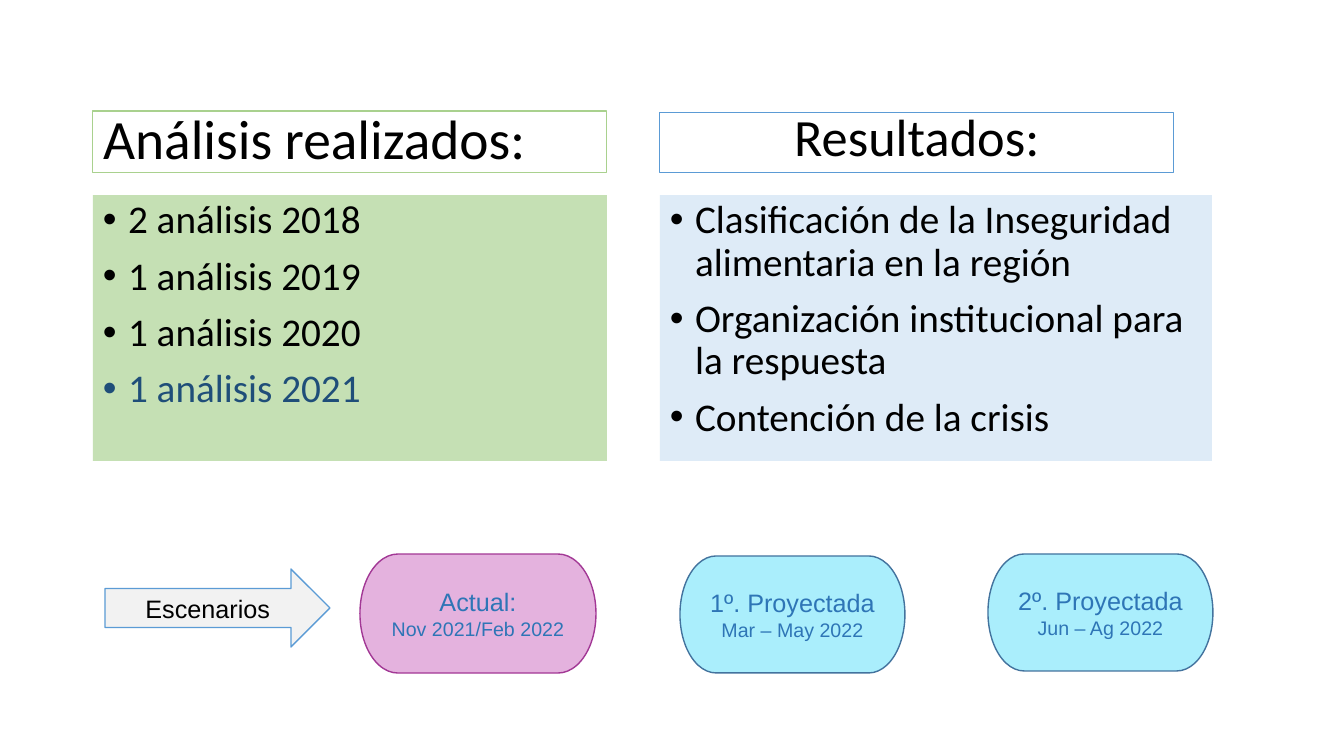
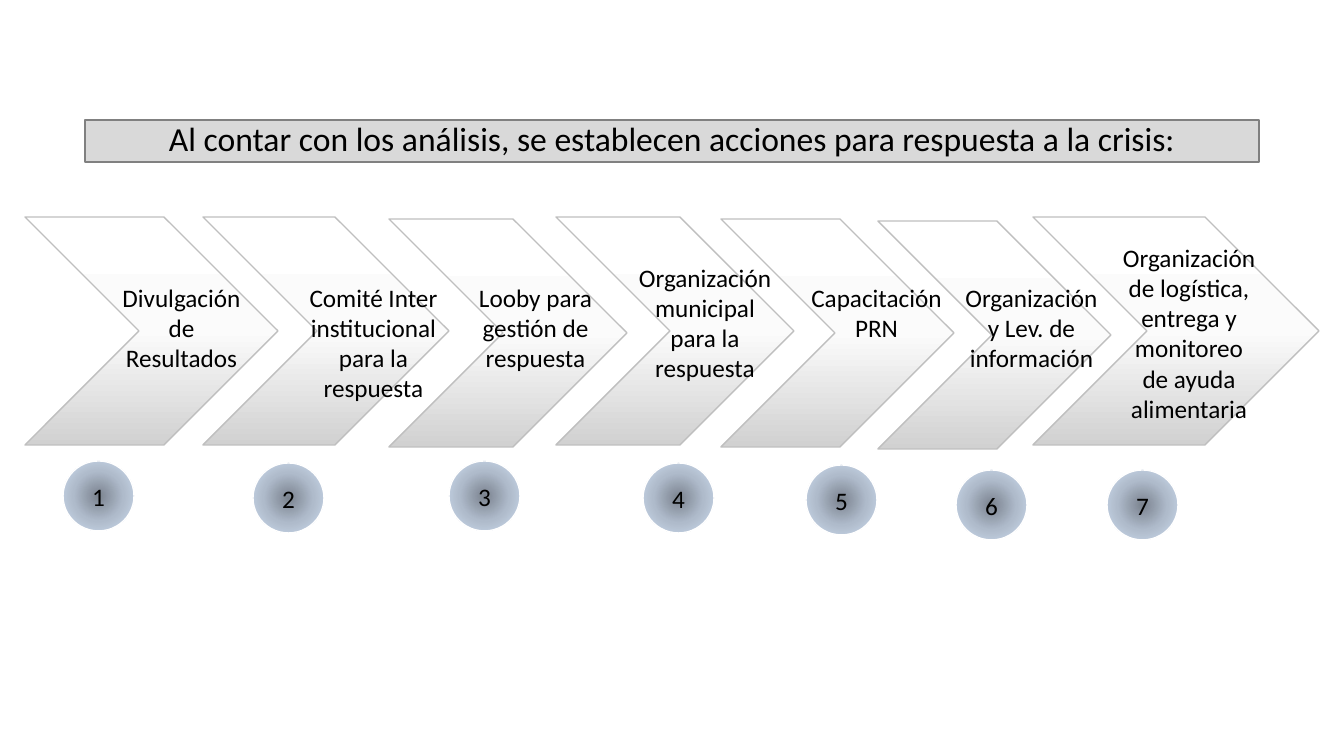
from pptx import Presentation
from pptx import util as u
from pptx.dml.color import RGBColor as Rgb
from pptx.enum import shapes, text
from pptx.oxml import parse_xml
from pptx.oxml.ns import nsdecls, qn

SCALE = 914400 / 100.8
BLACK = Rgb(0x00, 0x00, 0x00)
WHITE = Rgb(0xFF, 0xFF, 0xFF)
NAVY = Rgb(0x1F, 0x4E, 0x79)
BLUE = Rgb(0x2E, 0x75, 0xB6)
SKY = Rgb(0x5B, 0x9B, 0xD5)
STEEL = Rgb(0x43, 0x73, 0x9E)
ICE = Rgb(0xDE, 0xEB, 0xF7)
CYAN = Rgb(0xAA, 0xEE, 0xFC)
LEAF = Rgb(0xA9, 0xD1, 0x8E)
MINT = Rgb(0xC5, 0xE0, 0xB4)
PINK = Rgb(0xE4, 0xB2, 0xDE)
PLUM = Rgb(0xA2, 0x38, 0x95)
PALE = Rgb(0xF2, 0xF2, 0xF2)
SILVER = Rgb(0xD9, 0xD9, 0xD9)
ASH = Rgb(0xBF, 0xBF, 0xBF)
GRAY = Rgb(0x80, 0x80, 0x80)
SHADE = (WHITE, Rgb(0xFB, 0xFB, 0xFB), Rgb(0xD1, 0xD1, 0xD1))
GLOW = (Rgb(0x7B, 0x83, 0x8F), Rgb(0xAF, 0xBB, 0xCB), Rgb(0xD0, 0xDE, 0xF1))
DOWN = '<a:lin ang="5400000" scaled="0"/>'
ROUND = ('<a:path path="circle"><a:fillToRect l="50000" t="50000" '
         'r="50000" b="50000"/></a:path>')
KIND = shapes.MSO_SHAPE
LEFT, MID = text.PP_ALIGN.LEFT, text.PP_ALIGN.CENTER
TOP, CENTRE = text.MSO_ANCHOR.TOP, text.MSO_ANCHOR.MIDDLE

ITEM = {"alignment": LEFT, "line_spacing": 0.9, "space_before": u.Pt(10)}
STEPS = (
    ("Divulgación de Resultados", (0, 0, 253), (84, 60, 145, 132), (38, 244)),
    ("Comité Inter institucional para la respuesta",
     (178, 0, 246), (271, 60, 155, 132), (228, 246)),
    ("Looby para gestión de respuesta",
     (364, 2, 238), (444, 60, 133, 163), (424, 244)),
    ("Organización municipal para la respuesta",
     (531, 0, 238), (602, 40, 156, 163), (618, 246)),
    ("Capacitación PRN", (696, 2, 233), (774, 60, 155, 102), (781, 248)),
    ("Organización y Lev. de información",
     (853, 4, 233), (929, 60, 155, 132), (931, 253)),
    ("Organización de logística, entrega y monitoreo de ayuda alimentaria",
     (1008, 0, 286), (1087, 20, 154, 224), (1082, 253)),
)


def px(n):
    return u.Emu(round(n * SCALE))


def assign(obj, vals):
    for key, val in vals.items():
        setattr(obj, key, val)


def place(shape, box):
    assign(shape, dict(zip(("left", "top", "width", "height"), map(px, box))))


def paint(shape, fill, line, width=1):
    if fill is None:
        shape.fill.background()
    else:
        shape.fill.solid()
        shape.fill.fore_color.rgb = fill
    if line is None:
        shape.line.fill.background()
    else:
        shape.line.color.rgb = line
        shape.line.width = u.Pt(width)


def blend(shape, tones, form):
    stops = "".join(
        f'<a:gs pos="{i * 50000}"><a:srgbClr val="{tone}"/></a:gs>'
        for i, tone in enumerate(tones))
    shape.fill.gradient()
    old = shape.element.spPr.find(qn("a:gradFill"))
    new = parse_xml(f'<a:gradFill {nsdecls("a")} rotWithShape="1">'
                    f'<a:gsLst>{stops}</a:gsLst>{form}</a:gradFill>')
    old.getparent().replace(old, new)


def write(shape, rows, font="Calibri", anchor=CENTRE, para=None):
    frame = shape.text_frame
    assign(frame, {"word_wrap": True, "vertical_anchor": anchor,
                   "auto_size": text.MSO_AUTO_SIZE.NONE})
    for i, (words, size, tone) in enumerate(rows):
        line = frame.add_paragraph() if i else frame.paragraphs[0]
        assign(line, {"alignment": MID, **(para or {})})
        run = line.add_run()
        run.text = words
        assign(run.font, {"name": font, "size": u.Pt(size)})
        run.font.color.rgb = tone


def bullet(shape):
    for line in shape.text_frame.paragraphs:
        props = line._p.get_or_add_pPr()
        props.set("marL", "228600")
        props.set("indent", "-228600")
        for tag in ('buFont {} typeface="Arial"', 'buChar {} char="•"'):
            props.append(parse_xml(f'<a:{tag.format(nsdecls("a"))}/>'))


def draw(slide, kind, box, fill=None, line=None, width=1):
    shape = slide.shapes.add_shape(kind, *map(px, box))
    shape.shadow.inherit = False
    paint(shape, fill, line, width)
    return shape


def title(slide, box, words, size, fill, line, width=1, align=MID):
    shape = slide.shapes.title
    place(shape, box)
    paint(shape, fill, line, width)
    write(shape, [(words, size, BLACK)],
          para={"alignment": align, "line_spacing": 0.9})


def panel(slide, box, fill, rows):
    shape = draw(slide, KIND.RECTANGLE, box, fill)
    write(shape, [(words, 28, tone) for words, tone in rows],
          anchor=TOP, para=ITEM)
    bullet(shape)


def stages(slide, x, y):
    arrow = draw(slide, KIND.RIGHT_ARROW, (x, y + 15, 225, 78), PALE, SKY)
    write(arrow, [("Escenarios", 18, BLACK)], "Arial")
    for name, dates, dx, dy, w, h, fill, line in (
            ("Actual:", "Nov 2021/Feb 2022", 255, 0, 236, 119, PINK, PLUM),
            ("1º. Proyectada", "Mar – May 2022", 575, 2, 225, 117, CYAN, STEEL),
            ("2º. Proyectada", "Jun – Ag 2022", 883, 0, 225, 117, CYAN, STEEL)):
        pill = draw(slide, KIND.FLOWCHART_TERMINATOR,
                    (x + dx, y + dy, w, h), fill, line)
        write(pill, [(name, 18, BLUE), (dates, 14, BLUE)], "Arial")


def flow(slide, x, y):
    for i, (words, (cx, cy, cw), (tx, ty, tw, th), (dx, dy)) in enumerate(STEPS, 1):
        step = draw(slide, KIND.CHEVRON, (x + cx, y + cy, cw, 228), None, ASH)
        blend(step, SHADE, DOWN)
        label = slide.shapes.add_textbox(*map(px, (x + tx, y + ty, tw, th)))
        write(label, [(words, 18, BLACK)], anchor=TOP)
        dot = draw(slide, KIND.OVAL, (x + dx, y + dy, 71, 70), None, WHITE)
        blend(dot, GLOW, ROUND)
        write(dot, [(str(i), 18, BLACK)])


def review(slide):
    title(slide, (93, 111, 514, 62), "Análisis realizados:", 39.6,
          None, LEAF, 0.75, LEFT)
    panel(slide, (93, 195, 514, 266), MINT, (
        ("2 análisis 2018", BLACK), ("1 análisis 2019", BLACK),
        ("1 análisis 2020", BLACK), ("1 análisis 2021", NAVY)))
    head = draw(slide, KIND.RECTANGLE, (660, 113, 514, 60), None, SKY, 0.75)
    write(head, [("Resultados:", 37.4, BLACK)], para={"line_spacing": 0.7})
    panel(slide, (660, 195, 552, 266), ICE, (
        ("Clasificación de la Inseguridad alimentaria en la región", BLACK),
        ("Organización institucional para la respuesta", BLACK),
        ("Contención de la crisis", BLACK)))
    stages(slide, 105, 554)


def action(slide):
    title(slide, (85, 120, 1174, 42),
          "Al contar con los análisis, se establecen acciones para "
          "respuesta a la crisis:", 24, SILVER, GRAY)
    flow(slide, 25, 217)


def main():
    deck = Presentation()
    assign(deck, {"slide_width": px(1344), "slide_height": px(756)})
    for build in (review, action):
        build(deck.slides.add_slide(deck.slide_layouts[5]))
    deck.save("out.pptx")


if __name__ == "__main__":
    main()
